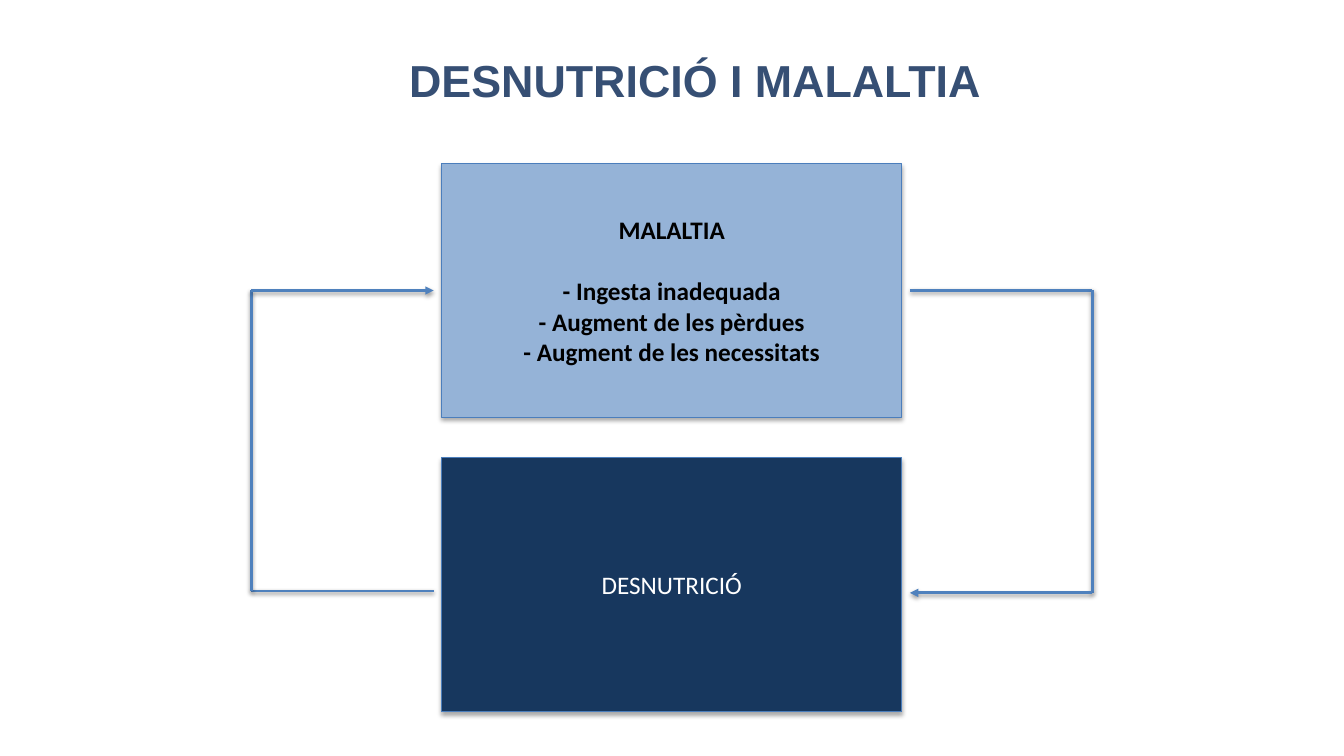
from itertools import pairwise

from lxml import etree
from pptx import Presentation
from pptx import util as u
from pptx.dml.color import RGBColor
from pptx.enum import shapes, text
from pptx.oxml import ns

Cm, Pt = u.Cm, u.Pt


def tint(code):
    return RGBColor.from_string(code)


def node(up, tag, **attrs):
    return etree.SubElement(up, ns.qn(tag), attrs)


def shade(part, alpha, dist):
    """Soft black shadow falling straight down."""
    props = part._element.spPr
    glow = props.find(ns.qn("a:effectLst"))
    if glow is None:
        glow = node(props, "a:effectLst")
    drop = node(glow, "a:outerShdw", blurRad=str(Pt(3.1)), dist=str(Pt(dist)),
                dir="5400000", rotWithShape="0")
    black = node(drop, "a:srgbClr", val="000000")
    node(black, "a:alpha", val=str(alpha * 1000))


def write(part, lines, size=18, font="Calibri", color="000000", bold=False, gap=0):
    """Centred lines, with a gap in points below the first one."""
    frame = part.text_frame
    frame.word_wrap = True
    frame.vertical_anchor = text.MSO_ANCHOR.MIDDLE
    for i, line in enumerate(lines):
        para = frame.paragraphs[0] if i == 0 else frame.add_paragraph()
        para.alignment = text.PP_ALIGN.CENTER
        if i == 0:
            para.space_after = Pt(gap)
        run = para.add_run()
        run.text = line
        run.font.size, run.font.name, run.font.bold = Pt(size), font, bold
        run.font.color.rgb = tint(color)


def title(slide, x, y, w, h):
    part = slide.shapes.add_textbox(Cm(x), Cm(y), Cm(w), Cm(h))
    write(part, ["DESNUTRICIÓ I MALALTIA"], size=32, font="Arial",
          color="364F74", bold=True)


def block(slide, x, y, w, h, fill, lines, **style):
    part = slide.shapes.add_shape(shapes.MSO_SHAPE.RECTANGLE, Cm(x), Cm(y), Cm(w), Cm(h))
    part.fill.solid()
    part.fill.fore_color.rgb = tint(fill)
    part.line.color.rgb = tint("4B7EBC")
    part.line.width = Pt(0.75)
    part.shadow.inherit = False
    shade(part, 35, 1.8)
    write(part, lines, **style)


def loop(slide, near, far, start, end):
    """Three-sided path out to far and back to near, ending in an arrow."""
    points = [(near, start), (far, start), (far, end), (near, end)]
    for a, b in pairwise(points):
        wire = slide.shapes.add_connector(
            shapes.MSO_CONNECTOR.STRAIGHT, *(Cm(v) for v in a + b))
        wire.line.color.rgb = tint("4F81BD")
        wire.line.width = Pt(2)
        if b == points[-1]:
            node(wire.line._get_or_add_ln(), "a:tailEnd", type="triangle")
        shade(wire, 38, 1.6)


def cycle(slide, x, y, w, h):
    tall, gap, reach = 6.4, 0.2, 4.6
    low = y + h - tall
    # Two states
    block(slide, x, y, w, tall, "95B3D7",
          ["MALALTIA", "- Ingesta inadequada", "- Augment de les pèrdues",
           "- Augment de les necessitats"], bold=True, gap=22)
    block(slide, x, low, w, tall, "17375E", ["DESNUTRICIÓ"], color="FFFFFF")
    # Arrows down the right side and up the left side
    top, foot = y + tall / 2, low + tall / 2 + gap
    right, left = x + w + gap, x - gap
    loop(slide, right, right + reach, top, foot)
    loop(slide, left, left - reach, foot - 0.05, top)


def main():
    deck = Presentation()
    deck.slide_width, deck.slide_height = Cm(33.87), Cm(19.05)
    slide = deck.slides.add_slide(deck.slide_layouts[6])
    title(slide, 1.52, 0.91, 32, 2.21)
    cycle(slide, 11.13, 4.12, 11.6, 13.82)
    deck.save("out.pptx")


if __name__ == "__main__":
    main()
